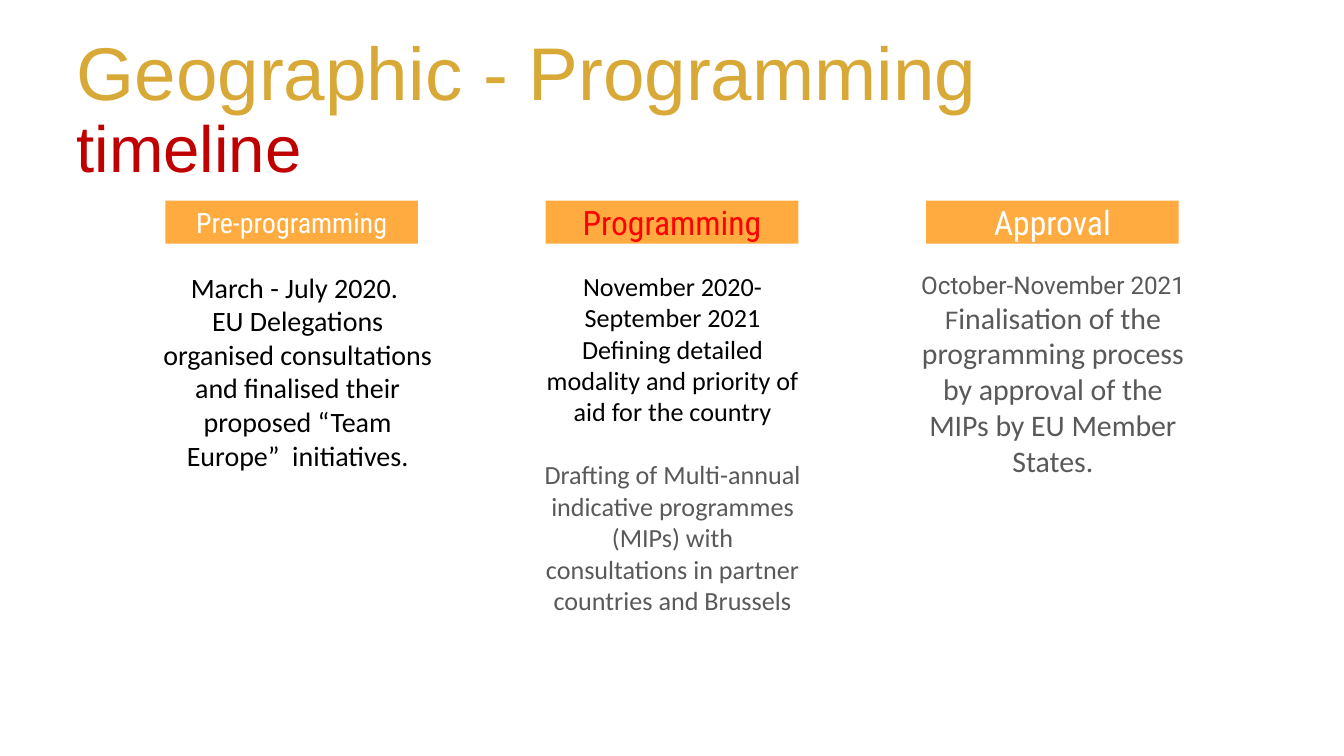
from dataclasses import dataclass

from pptx import Presentation
from pptx.dml.color import RGBColor
from pptx.enum.shapes import MSO_SHAPE as Shape
from pptx.enum.text import MSO_ANCHOR as Anchor, PP_ALIGN as Align
from pptx.util import Inches, Pt


@dataclass(frozen=True)
class Theme:
    gold: str = "D9A938"
    crimson: str = "C00000"
    orange: str = "FFAB40"
    white: str = "FFFFFF"
    red: str = "FF0000"
    black: str = "000000"
    grey: str = "595959"
    title_font: str = "Arial"
    label_font: str = "Roboto Condensed"
    body_font: str = "Calibri"
    date_font: str = "Roboto"
    title_size: int = 40
    subtitle_size: int = 35
    label_size: int = 18
    small_label_size: int = 15
    early_size: int = 15
    middle_size: int = 14
    late_size: int = 16
    date_size: int = 13


THEME = Theme()
COLUMNS, ROWS = 100, 56.25
FIRST_PHASE, PHASE_STEP = 12.3, 28.3
LABEL_TOP, LABEL_WIDTH, LABEL_HEIGHT = 14.93, 18.8, 3.2
BODY_TOP, BODY_OUTDENT = 19.7, 1.2


def style(font, name, size, color):
    font.name, font.size = name, Pt(size)
    font.color.rgb = RGBColor.from_string(color)


class TimelineSlide:
    def __init__(self, deck, theme):
        self.theme = theme
        self.slide = deck.slides.add_slide(deck.slide_layouts[6])
        self.column = deck.slide_width / COLUMNS
        self.row = deck.slide_height / ROWS

    def place(self, left, top, width, height):
        """Turn grid columns and rows into slide lengths."""
        return (round(left * self.column), round(top * self.row),
                round(width * self.column), round(height * self.row))

    def set_frame(self, frame, anchor=Anchor.TOP):
        frame.word_wrap = True
        frame.vertical_anchor = anchor
        frame.margin_left = frame.margin_right = Inches(0.07)
        frame.margin_top = frame.margin_bottom = Inches(0.04)
        return frame

    def text_box(self, *grid):
        box = self.slide.shapes.add_textbox(*self.place(*grid))
        return self.set_frame(box.text_frame)

    def title(self, heading, subheading):
        line = self.text_box(5, 2.25, 90, 9.4).paragraphs[0]
        line.line_spacing = 0.9
        theme = self.theme
        for text, size, color in ((heading, theme.title_size, theme.gold),
                                  (subheading, theme.subtitle_size, theme.crimson)):
            if line.runs:
                line.add_line_break()
            run = line.add_run()
            run.text = text
            style(run.font, theme.title_font, size, color)

    def label(self, phase, text, size, color):
        left = FIRST_PHASE + phase * PHASE_STEP
        bar = self.slide.shapes.add_shape(
            Shape.ROUNDED_RECTANGLE,
            *self.place(left, LABEL_TOP, LABEL_WIDTH, LABEL_HEIGHT))
        bar.adjustments[0] = 0
        bar.shadow.inherit = False
        bar.fill.solid()
        bar.fill.fore_color.rgb = RGBColor.from_string(self.theme.orange)
        bar.line.fill.background()
        caption = self.set_frame(bar.text_frame, Anchor.MIDDLE).paragraphs[0]
        caption.text, caption.alignment = text, Align.CENTER
        style(caption.font, self.theme.label_font, size, color)

    def body(self, phase, width, height, paragraphs):
        """Each paragraph is (space before, runs); a run is (text, font, size, colour)."""
        left = FIRST_PHASE + phase * PHASE_STEP - BODY_OUTDENT
        frame = self.text_box(left, BODY_TOP, width, height)
        for index, (space, runs) in enumerate(paragraphs):
            paragraph = frame.add_paragraph() if index else frame.paragraphs[0]
            paragraph.alignment = Align.CENTER
            if space:
                paragraph.space_before = Pt(space)
            for text, *look in runs:
                run = paragraph.add_run()
                run.text = text
                if len(runs) > 1:
                    style(run.font, *look)
            if len(runs) == 1:
                style(paragraph.font, *look)


def main():
    deck = Presentation()
    deck.slide_width = Inches(10)
    deck.slide_height = deck.slide_width * 9 // 16
    timeline = TimelineSlide(deck, THEME)
    timeline.title("Geographic - Programming", "timeline")

    early = (THEME.body_font, THEME.early_size, THEME.black)
    middle = (THEME.body_font, THEME.middle_size, THEME.black)
    drafting = (THEME.body_font, THEME.middle_size, THEME.grey)
    date = (THEME.date_font, THEME.date_size, THEME.grey)
    late = (THEME.body_font, THEME.late_size, THEME.grey)
    phases = [
        (("Pre-programming", THEME.small_label_size, THEME.white), 22.1, 16.2, [
            (0, [("March - July 2020. ", *early)]),
            (0, [("EU Delegations organised consultations and finalised "
                  "their proposed “Team Europe”  initiatives.", *early)]),
        ]),
        (("Programming", THEME.label_size, THEME.red), 21.3, 15.2, [
            (0, [("November 2020-September 2021", *middle)]),
            (0, [("Defining detailed modality and priority of aid "
                  "for the country", *middle)]),
            (17, [("Drafting of Multi-annual indicative programmes (MIPs) with "
                   "consultations in partner countries and Brussels", *drafting)]),
        ]),
        (("Approval", THEME.label_size, THEME.white), 21.3, 7.5, [
            (0, [("October-November 2021", *date)]),
            (0, [("F", *date),
                 ("inalisation of the programming process by approval of "
                  "the MIPs by EU Member States.", *late)]),
        ]),
    ]
    for phase, (label, width, height, paragraphs) in enumerate(phases):
        timeline.body(phase, width, height, paragraphs)
        timeline.label(phase, *label)
    deck.save("out.pptx")


if __name__ == "__main__":
    main()
